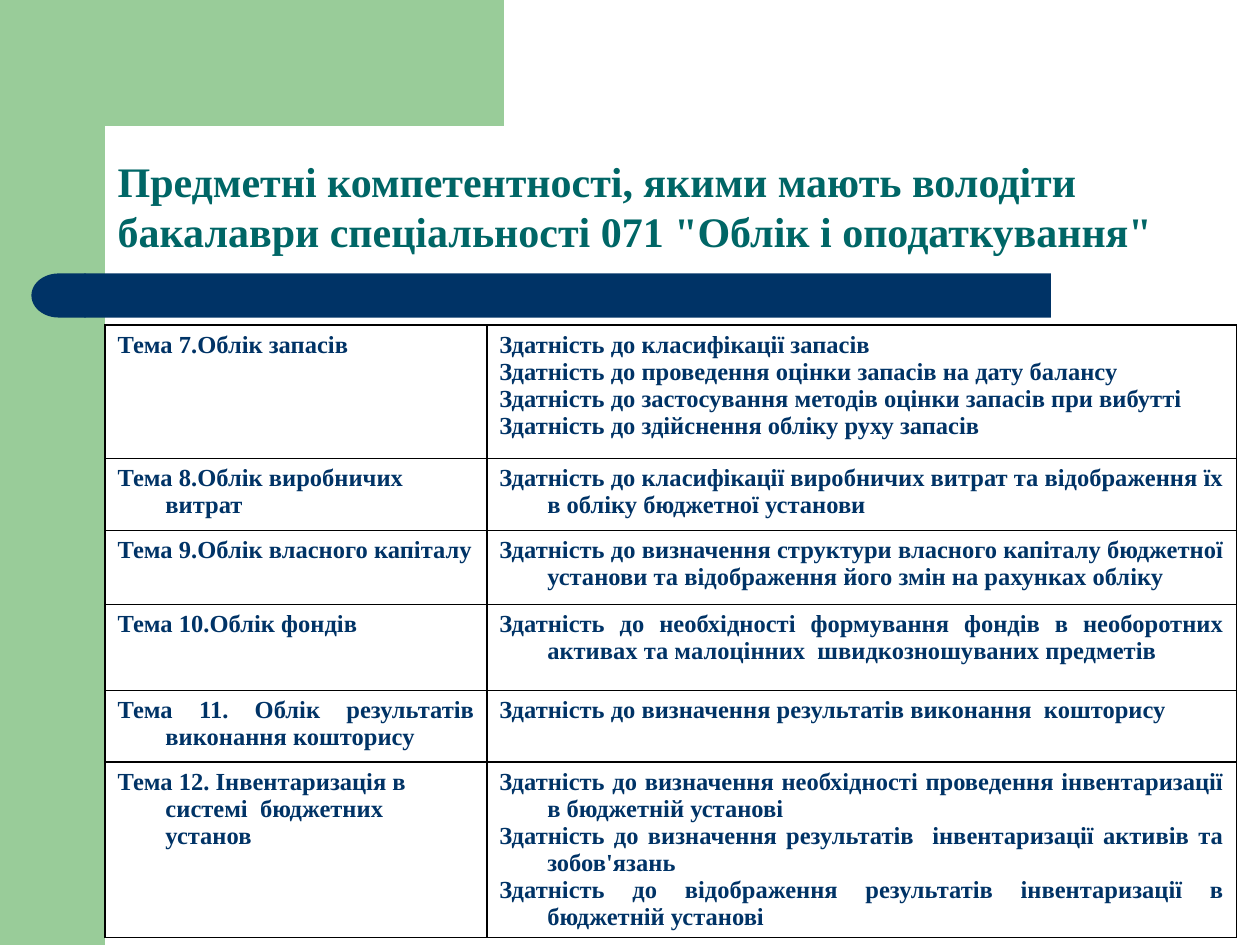
"""Build the slide listing subject competences for accounting bachelors."""
from math import cos, pi, sin

from lxml.etree import SubElement
from pptx import Presentation
from pptx.dml.color import RGBColor
from pptx.enum.shapes import MSO_SHAPE
from pptx.enum.text import MSO_ANCHOR, PP_ALIGN
from pptx.oxml.ns import qn
from pptx.util import Inches, Pt

TITLE = 'Предметні компетентності, якими мають володіти бакалаври спеціальності 071 "Облік і оподаткування"'
LEFT, JUSTIFY = PP_ALIGN.LEFT, PP_ALIGN.JUSTIFY
# Each row: height, (topic alignment, topic), (skill alignment, skills)
ROWS = [
    (1.06, (LEFT, ["Тема 7.Облік запасів"]), (LEFT, [
        "Здатність до класифікації запасів",
        "Здатність до проведення оцінки запасів на дату балансу",
        "Здатність до застосування методів оцінки запасів при вибутті",
        "Здатність до здійснення обліку руху запасів"])),
    (0.57, (LEFT, ["Тема 8.Облік виробничих витрат"]), (LEFT, [
        "Здатність до класифікації виробничих витрат та відображення їх в обліку бюджетної установи"])),
    (0.59, (LEFT, ["Тема 9.Облік власного капіталу"]), (JUSTIFY, [
        "Здатність до визначення структури власного капіталу бюджетної установи "
        "та відображення його змін на рахунках обліку"])),
    (0.68, (LEFT, ["Тема 10.Облік фондів"]), (JUSTIFY, [
        "Здатність до необхідності формування фондів в необоротних активах "
        "та малоцінних  швидкозношуваних предметів"])),
    (0.57, (JUSTIFY, ["Тема 11. Облік результатів виконання кошторису"]), (JUSTIFY, [
        "Здатність до визначення результатів виконання  кошторису"])),
    (1.17, (LEFT, ["Тема 12. Інвентаризація в системі  бюджетних установ"]), (JUSTIFY, [
        "Здатність до визначення необхідності проведення інвентаризації в бюджетній установі",
        "Здатність до визначення результатів  інвентаризації активів та зобов'язань",
        "Здатність до відображення результатів інвентаризації в бюджетній установі"])),
]
COLUMNS = (3.03, 5.95)
GREEN = RGBColor(0x99, 0xCC, 0x99)
NAVY = RGBColor(0x00, 0x33, 0x66)
TEAL = RGBColor(0x00, 0x66, 0x66)
BLACK = RGBColor(0, 0, 0)
FONT = "Times New Roman"
WIDTH, HEIGHT = 10, 7.5
MARGIN = WIDTH / 12
RADIUS = 0.33
BAR_TOP, BAR_HEIGHT = 2.17, 0.35
INDENT = Inches(0.38)


def paint(shape, color):
    shape.shadow.inherit = False
    shape.fill.solid()
    shape.fill.fore_color.rgb = color
    shape.line.fill.background()


def add_block(page, kind, box, color):
    shape = page.shapes.add_shape(kind, *map(Inches, box))
    paint(shape, color)
    return shape


def add_corner(page):
    center = MARGIN + RADIUS
    angles = [pi / 2 * step / 16 for step in range(17)]
    arc = [(center - RADIUS * sin(a), center - RADIUS * cos(a)) for a in angles]
    outline = [(3.5, 0), (3.5, MARGIN), *arc, (MARGIN, 1.28), (0.5, 1.28), (0.5, 0)]
    builder = page.shapes.build_freeform(*outline[0], scale=Inches(1))
    builder.add_line_segments(outline[1:], close=True)
    paint(builder.convert_to_shape(), GREEN)


def style(paragraph, size, color, alignment):
    paragraph.alignment = alignment
    font = paragraph.font
    font.name, font.size, font.bold = FONT, Pt(size), True
    font.color.rgb = color


def add_title(page):
    title = page.shapes.title
    title.left, title.top, title.width, title.height = map(Inches, (MARGIN, MARGIN, 8.67, 1.25))
    title.text_frame.text = TITLE
    title.text_frame.word_wrap = True
    title.text_frame.vertical_anchor = MSO_ANCHOR.BOTTOM
    style(title.text_frame.paragraphs[0], 24, TEAL, LEFT)


def add_borders(cell):
    properties = cell._tc.get_or_add_tcPr()
    for position, side in enumerate(("a:lnL", "a:lnR", "a:lnT", "a:lnB")):
        line = properties.makeelement(qn(side), {"w": str(Pt(1))})
        properties.insert(position, line)
        fill = SubElement(line, qn("a:solidFill"))
        SubElement(fill, qn("a:srgbClr"), val=str(BLACK))


def fill_cell(cell, alignment, lines):
    cell.fill.background()
    add_borders(cell)
    cell.text_frame.text = "\n".join(lines)
    for paragraph in cell.text_frame.paragraphs:
        style(paragraph, 14, NAVY, alignment)
        properties = paragraph._p.get_or_add_pPr()
        properties.set("marL", str(INDENT))
        properties.set("indent", str(-INDENT))


def add_competences(page):
    box = (MARGIN, 2.58, sum(COLUMNS), sum(row[0] for row in ROWS))
    table = page.shapes.add_table(len(ROWS), len(COLUMNS), *map(Inches, box)).table
    table.first_row = table.horz_banding = False
    for column, width in zip(table.columns, COLUMNS):
        column.width = Inches(width)
    for row, (height, *contents) in zip(table.rows, ROWS):
        row.height = Inches(height)
        for cell, (alignment, lines) in zip(row.cells, contents):
            fill_cell(cell, alignment, lines)


def main():
    deck = Presentation()
    deck.slide_width, deck.slide_height = Inches(WIDTH), Inches(HEIGHT)
    page = deck.slides.add_slide(deck.slide_layouts[5])
    add_block(page, MSO_SHAPE.RECTANGLE, (0, 0, MARGIN, HEIGHT), GREEN)
    add_corner(page)
    bar = add_block(page, MSO_SHAPE.ROUNDED_RECTANGLE, (0.67, BAR_TOP, 7.67, BAR_HEIGHT), NAVY)
    bar.adjustments[0] = 0
    cap = add_block(page, MSO_SHAPE.FLOWCHART_DELAY, (0.25, BAR_TOP, 0.43, BAR_HEIGHT), NAVY)
    cap._element.spPr.get_or_add_xfrm().set("flipH", "1")
    add_title(page)
    add_competences(page)
    deck.save("out.pptx")


if __name__ == "__main__":
    main()
